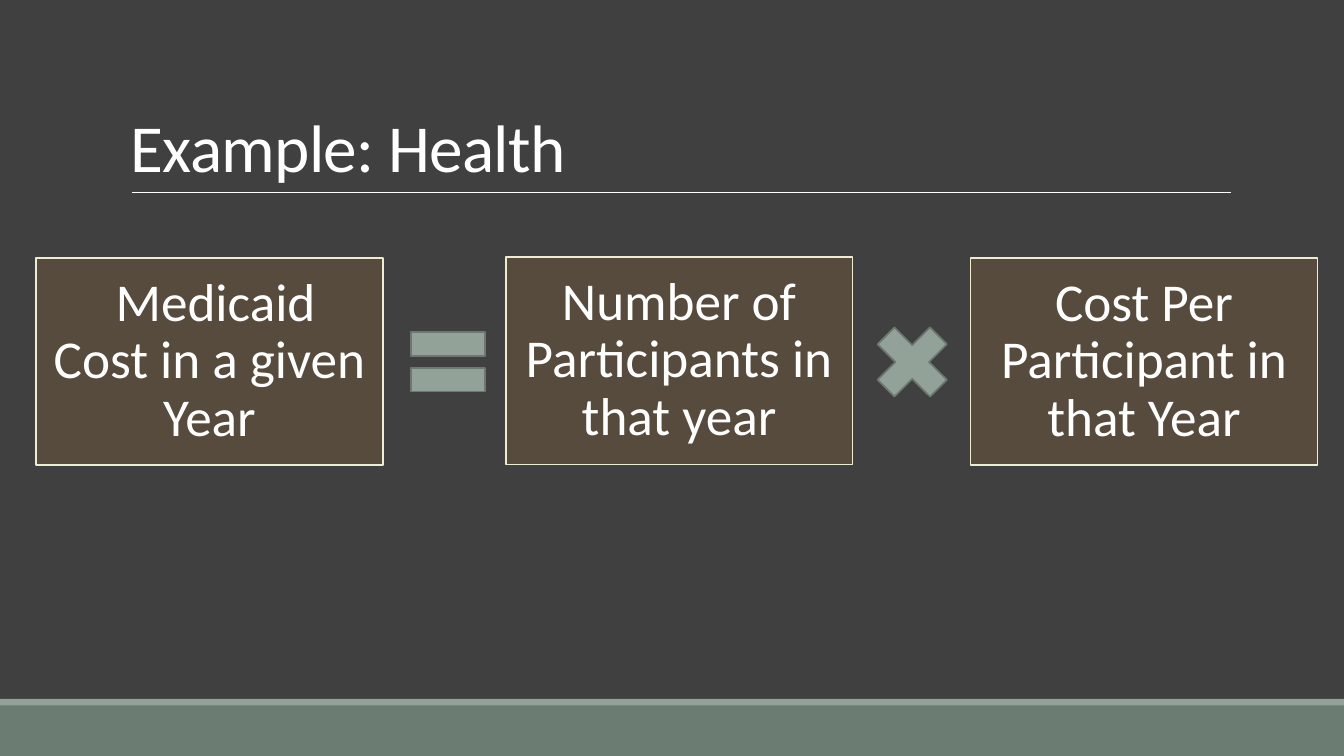
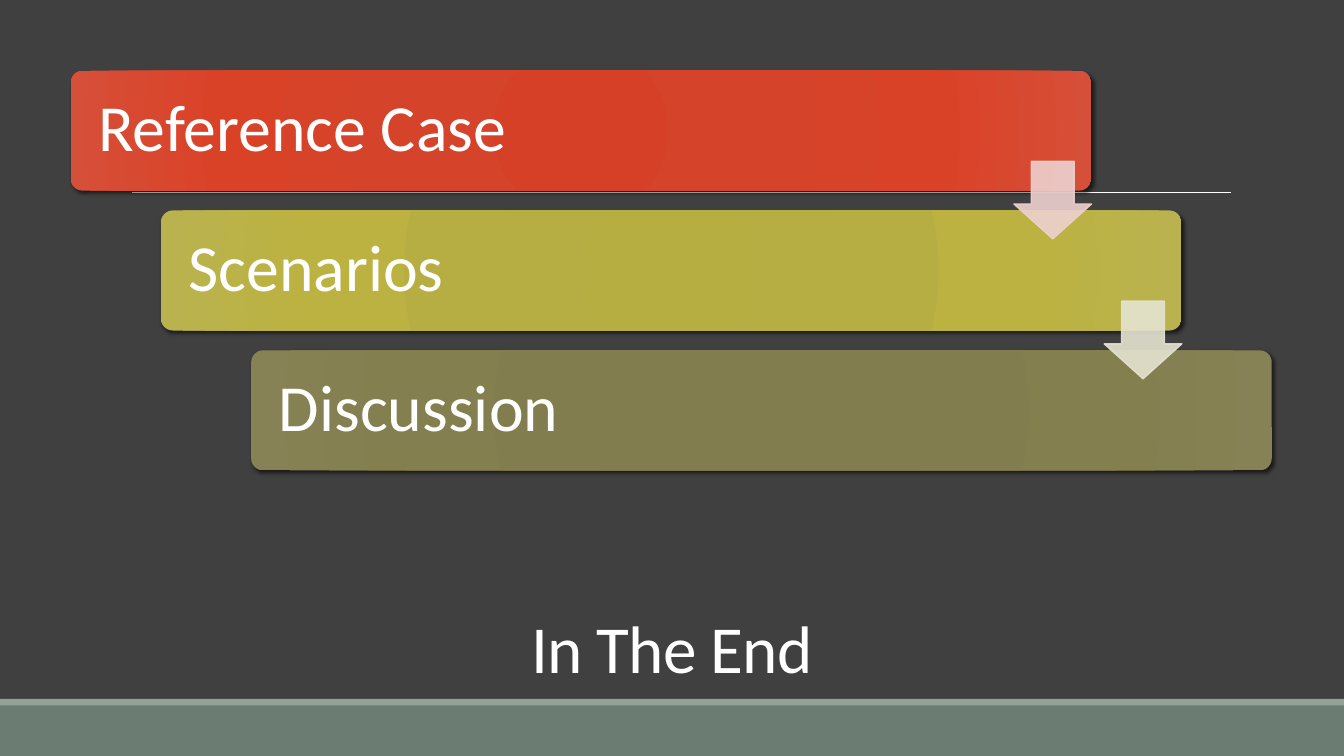
from lxml.etree import SubElement
from pptx import Presentation
from pptx.dml.color import RGBColor
from pptx.enum.shapes import MSO_CONNECTOR, MSO_SHAPE
from pptx.enum.text import MSO_ANCHOR, PP_ALIGN
from pptx.oxml import parse_xml
from pptx.oxml.ns import nsdecls, qn
from pptx.util import Inches, Pt

COLORS = {
    "background": "404040",
    "text": "FFFFFF",
    "band": "6B7D72",
    "sage": "93A299",
    "sage_line": "6D7871",
    "box": "564B3C",
    "box_line": "ECEDD1",
    "pink_arrow": "EDD1CF",
    "cream_arrow": "E5E3D1",
}
GRADIENTS = {
    "red": ("D54027", "D4432A", "DA4228", "D64F38"),
    "yellow": ("B6AE40", "B6AE43", "BBB241", "BAB24E"),
    "olive": ("817C4C", "817D4E", "847F4E", "868256"),
}
STOPS = (0, 34, 70, 100)
FONT = "Calibri"
COLS, ROWS = 160, 90


def rgb(name):
    return RGBColor.from_string(COLORS[name])


def apply(target, values):
    for name, value in values.items():
        setattr(target, name, value)


class Deck:
    """Holds the shared style and the current slide; lengths are grid cells."""

    def __init__(self):
        self.prs = Presentation()
        apply(self.prs, {"slide_width": Inches(13.33), "slide_height": Inches(7.5)})
        self.col = self.prs.slide_width / COLS
        self.row = self.prs.slide_height / ROWS
        fill = self.prs.slide_master.background.fill
        fill.solid()
        fill.fore_color.rgb = rgb("background")
        self.s = None

    def place(self, x, y, w, h):
        return (round(x * self.col), round(y * self.row),
                round(w * self.col), round(h * self.row))

    def slide(self):
        self.s = self.prs.slides.add_slide(self.prs.slide_layouts[6])
        self.shape(MSO_SHAPE.RECTANGLE, (0, 84, COLS, 6), "band")
        self.shape(MSO_SHAPE.RECTANGLE, (0, 83.2, COLS, 0.8), "sage")
        self.rule(15.7, 146.5, 22.85)

    def rule(self, x1, x2, y):
        left, top, width, _ = self.place(x1, y, x2 - x1, 0)
        line = self.s.shapes.add_connector(
            MSO_CONNECTOR.STRAIGHT, left, top, left + width, top)
        line.line.width = Pt(0.5)
        line.line.color.rgb = rgb("text")
        SubElement(line._element.spPr, qn("a:effectLst"))

    def shape(self, kind, at, fill=None, line=None, width=1.25, adj=()):
        sp = self.s.shapes.add_shape(kind, *self.place(*at))
        sp.shadow.inherit = False
        for i, value in enumerate(adj):
            sp.adjustments[i] = value
        if fill:
            sp.fill.solid()
            sp.fill.fore_color.rgb = rgb(fill)
        if line:
            sp.line.color.rgb = rgb(line)
            sp.line.width = Pt(width)
        else:
            sp.line.fill.background()
        return sp

    def label(self, sp, text, size, align, inset, anchor=MSO_ANCHOR.MIDDLE, spacing=0.9):
        tf = sp.text_frame
        side, top = Inches(inset[0]), Inches(inset[1])
        apply(tf, {"word_wrap": True, "vertical_anchor": anchor,
                   "margin_left": side, "margin_right": side,
                   "margin_top": top, "margin_bottom": top})
        p = tf.paragraphs[0]
        apply(p, {"alignment": align, "line_spacing": spacing})
        r = p.add_run()
        r.text = text
        apply(r.font, {"name": FONT, "size": Pt(size)})
        r.font.color.rgb = rgb("text")
        return r

    def title(self, text, at, align=PP_ALIGN.LEFT):
        tb = self.s.shapes.add_textbox(*self.place(*at))
        r = self.label(tb, text, 48, align, (0.1, 0.05), MSO_ANCHOR.BOTTOM, 0.85)
        r.font._element.set("spc", "-50")

    def term(self, text, x, y):
        box = self.shape(MSO_SHAPE.RECTANGLE, (x, y, 41.3, 24.7), "box", "box_line")
        self.label(box, text, 38, PP_ALIGN.CENTER, (0.16, 0.16))

    def operator(self, kind, x):
        self.shape(kind, (x, 37.1, 12, 12), "sage", "sage_line")

    def step(self, text, x, y, gradient):
        bar = self.shape(MSO_SHAPE.ROUNDED_RECTANGLE, (x, y, 121.5, 14.3), adj=(0.1,))
        self.radial_fill(bar, GRADIENTS[gradient])
        self.drop_shadow(bar)
        self.label(bar, text, 47, PP_ALIGN.LEFT, (0.24, 0.2))

    def step_arrow(self, x, y, color):
        arrow = self.shape(MSO_SHAPE.DOWN_ARROW, (x, y, 9.25, 9.25), color, color, 1,
                           adj=(0.55, 0.45))
        for clr in arrow._element.spPr.iter(qn("a:srgbClr")):
            SubElement(clr, qn("a:alpha"), val="90000")

    def radial_fill(self, sp, colors):
        sp.fill.gradient()
        spPr = sp._element.spPr
        stops = "".join(
            f'<a:gs pos="{pos * 1000}"><a:srgbClr val="{color}"/></a:gs>'
            for pos, color in zip(STOPS, colors))
        spPr.replace(spPr.find(qn("a:gradFill")), parse_xml(
            f'<a:gradFill {nsdecls("a")} rotWithShape="1"><a:gsLst>{stops}</a:gsLst>'
            '<a:path path="circle"><a:fillToRect l="100000" t="100000" '
            'r="100000" b="100000"/></a:path></a:gradFill>'))

    def drop_shadow(self, sp):
        effects = sp._element.spPr.find(qn("a:effectLst"))
        effects.append(parse_xml(
            f'<a:outerShdw {nsdecls("a")} blurRad="{Pt(3)}" dist="{Pt(2)}" '
            'dir="2700000" algn="br" rotWithShape="0"><a:srgbClr val="000000">'
            '<a:alpha val="60000"/></a:srgbClr></a:outerShdw>'))


def health_slide(deck):
    deck.slide()
    deck.title("Example: Health", (14.4, 3.7, 132, 19.1))
    deck.term(" Medicaid Cost in a given Year", 4.3, 30.7)
    deck.term("Number of Participants in that year", 60.2, 30.6)
    deck.term("Cost Per Participant in that Year", 115.55, 30.7)
    deck.operator(MSO_SHAPE.MATH_EQUAL, 47.3)
    deck.operator(MSO_SHAPE.MATH_MULTIPLY, 102.6)


def end_slide(deck):
    deck.slide()
    deck.title("In The End", (14, 68.9, 132, 13.55), PP_ALIGN.CENTER)
    x, y, dx, dy = 8.4, 8.4, 10.75, 16.65
    steps = (("Reference Case", "red"), ("Scenarios", "yellow"), ("Discussion", "olive"))
    for i, (text, gradient) in enumerate(steps):
        deck.step(text, x + i * dx, y + i * dy, gradient)
    for i, color in enumerate(("pink_arrow", "cream_arrow")):
        deck.step_arrow(x + 112.3 + i * dx, y + 10.8 + i * dy, color)


def main():
    deck = Deck()
    health_slide(deck)
    end_slide(deck)
    deck.prs.save("out.pptx")


if __name__ == "__main__":
    main()
